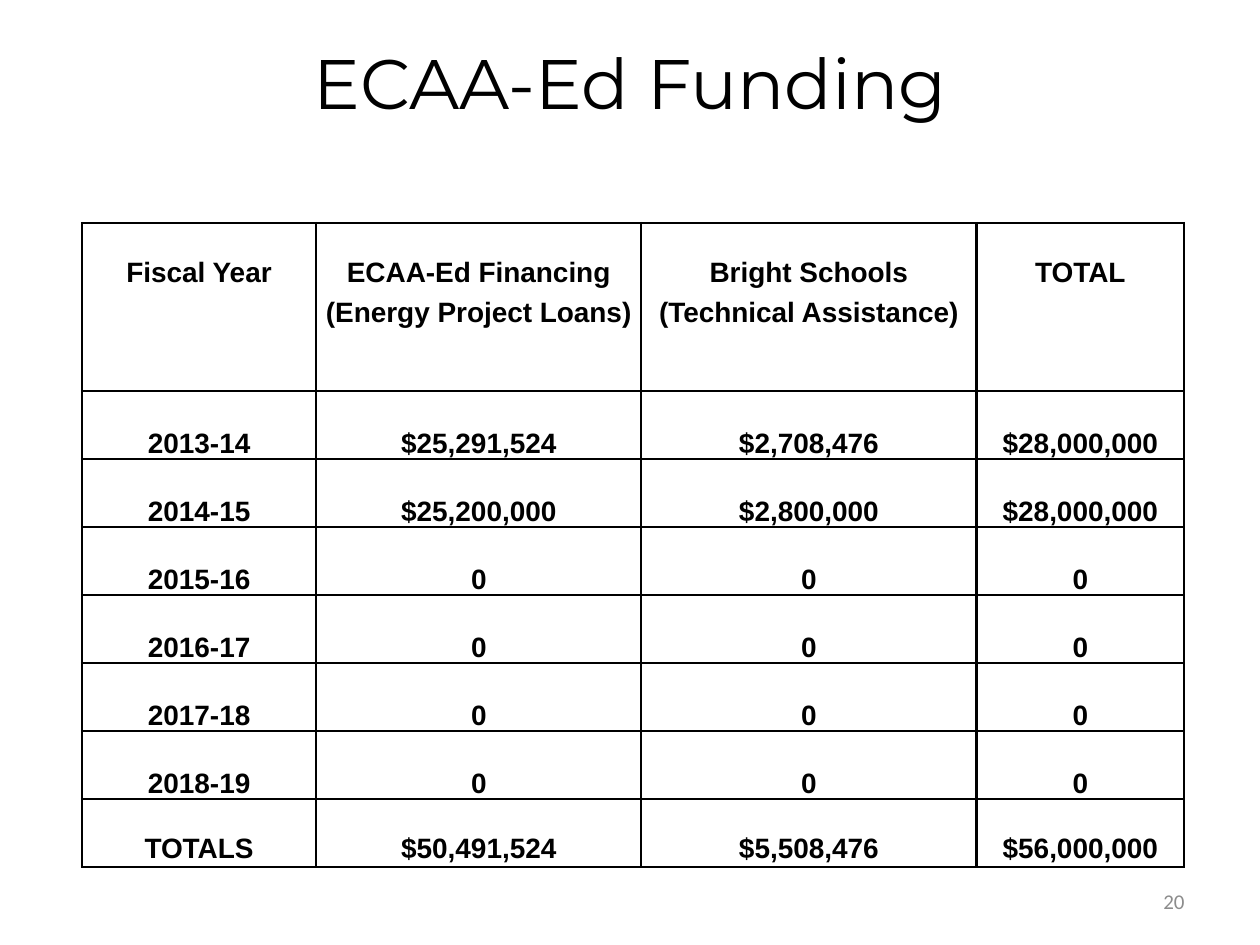
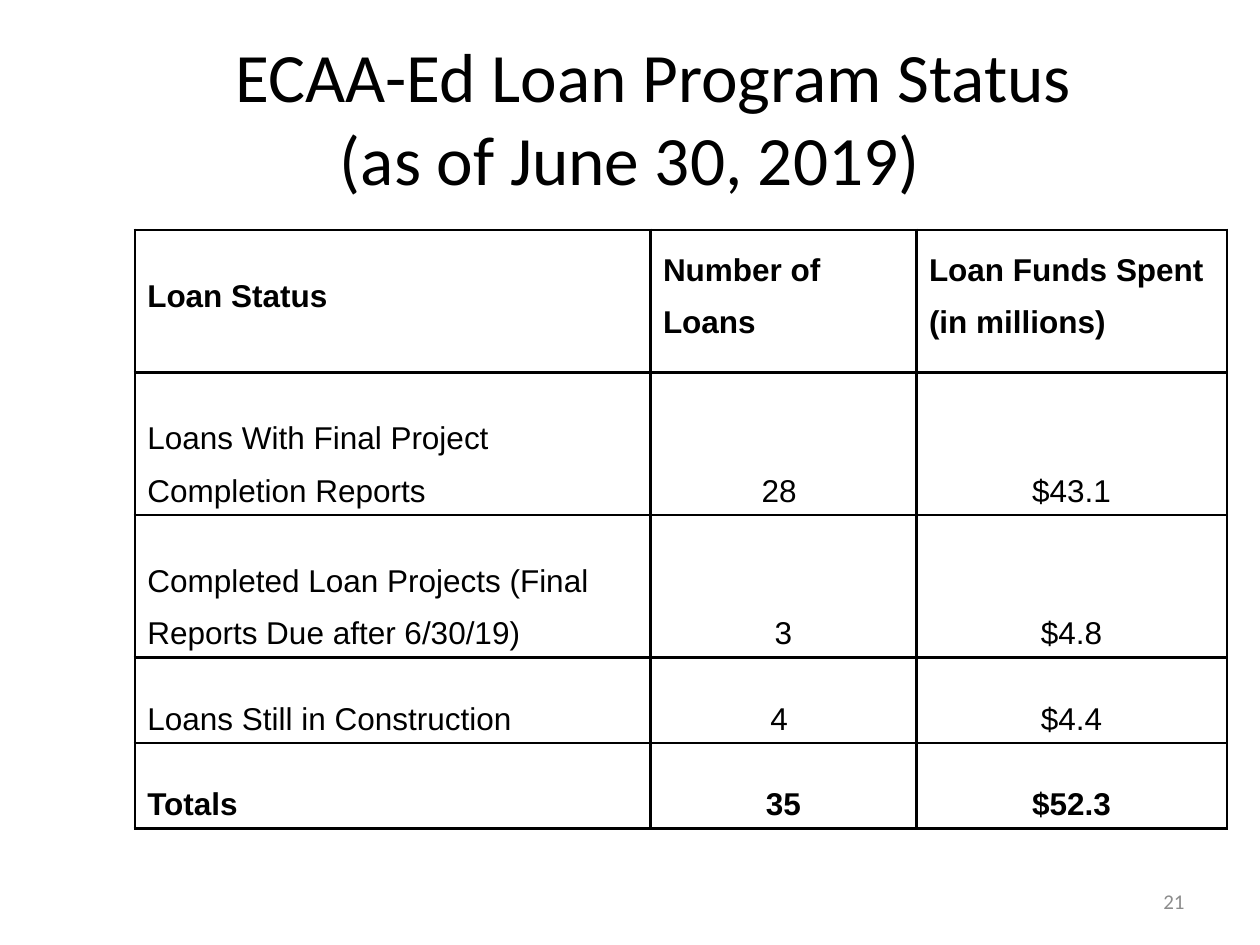
from lxml import etree
from pptx import Presentation
from pptx.dml.color import RGBColor
from pptx.enum import text
from pptx.oxml import ns
from pptx.util import Pt

BLACK = RGBColor(0x00, 0x00, 0x00)
WHITE = RGBColor(0xFF, 0xFF, 0xFF)
GREY = RGBColor(0x8C, 0x8C, 0x8C)
BORDER_WIDTH = 1.5
LINE_HEIGHT = 15
LEFT, CENTER, RIGHT = text.PP_ALIGN.LEFT, text.PP_ALIGN.CENTER, text.PP_ALIGN.RIGHT
TOP, MIDDLE, BOTTOM = (text.MSO_ANCHOR.TOP, text.MSO_ANCHOR.MIDDLE,
                       text.MSO_ANCHOR.BOTTOM)

FUNDING_HEADER = [["Fiscal Year"],
                  ["ECAA-Ed Financing", "(Energy Project Loans)"],
                  ["Bright Schools", "(Technical Assistance)"],
                  ["TOTAL"]]
FUNDING_YEARS = [
    ["2013-14", "$25,291,524", "$2,708,476", "$28,000,000"],
    ["2014-15", "$25,200,000", "$2,800,000", "$28,000,000"],
    *[[year, "0", "0", "0"] for year in ("2015-16", "2016-17", "2017-18", "2018-19")],
]
FUNDING_TOTALS = ["TOTALS", "$50,491,524", "$5,508,476", "$56,000,000"]

LOAN_HEADER = [["Loan Status"], ["Number of", "Loans"],
               ["Loan Funds Spent", "(in millions)"]]
LOAN_STATUS = [
    [["Loans With Final Project", "Completion Reports"], ["28 "], ["$43.1"]],
    [["Completed Loan Projects (Final", "Reports Due after 6/30/19)"], ["3"], ["$4.8"]],
    [["Loans Still in Construction"], ["4 "], ["$4.4"]],
    [["Totals"], ["35"], ["$52.3"]],
]


def write_lines(frame, lines, font, size, color, align, bold=False):
    for index, line in enumerate(lines):
        paragraph = frame.paragraphs[0] if index == 0 else frame.add_paragraph()
        paragraph.alignment = align
        run = paragraph.add_run()
        run.text = line
        run.font.name = font
        run.font.size = Pt(size)
        run.font.bold = bold
        run.font.color.rgb = color
    return frame.paragraphs


def add_label(slide, box, lines, font, size, color, align):
    frame = slide.shapes.add_textbox(*map(Pt, box)).text_frame
    frame.word_wrap = True
    frame.vertical_anchor = MIDDLE
    write_lines(frame, lines, font, size, color, align)
    return frame


def add_title(slide, box, lines, font, size):
    return add_label(slide, box, lines, font, size, BLACK, CENTER)


def add_page_number(slide, number):
    add_label(slide, (516, 500.5, 168, 28.8), [str(number)], "Calibri", 12, GREY, RIGHT)


def add_borders(cell):
    properties = cell._tc.get_or_add_tcPr()
    for side in ("lnL", "lnR", "lnT", "lnB"):
        border = etree.SubElement(properties, ns.qn(f"a:{side}"), w=str(Pt(BORDER_WIDTH)))
        fill = etree.SubElement(border, ns.qn("a:solidFill"))
        etree.SubElement(fill, ns.qn("a:srgbClr"), val=str(BLACK))


def add_grid(slide, left, top, widths, heights):
    table = slide.shapes.add_table(len(heights), len(widths), Pt(left), Pt(top),
                                   Pt(sum(widths)), Pt(sum(heights))).table
    table.first_row = table.horz_banding = False
    for column, width in zip(table.columns, widths):
        column.width = Pt(width)
    for row, height in zip(table.rows, heights):
        row.height = Pt(height)
    return table


def fill_cell(cell, lines, size, align, anchor, bold, gap):
    add_borders(cell)
    cell.fill.solid()
    cell.fill.fore_color.rgb = WHITE
    cell.vertical_anchor = anchor
    paragraphs = write_lines(cell.text_frame, lines, "Arial", size, BLACK, align, bold)
    for paragraph in paragraphs:
        paragraph.line_spacing = Pt(LINE_HEIGHT)
    for paragraph in paragraphs[:-1]:
        paragraph.space_after = Pt(gap)


def add_funding_table(slide, left, top):
    gap = 7.5
    years = [[[value] for value in row] for row in FUNDING_YEARS]
    rows = [FUNDING_HEADER, *years, [[value] for value in FUNDING_TOTALS]]
    table = add_grid(slide, left, top, (133.9, 185.8, 191.5, 118.8),
                     [96] + [38.87] * (len(rows) - 1))
    for r, row in enumerate(rows):
        is_year = 0 < r < len(rows) - 1
        for c, lines in enumerate(row):
            cell = table.cell(r, c)
            cell.margin_left = cell.margin_right = Pt(5)
            cell.margin_top = Pt(0 if is_year else LINE_HEIGHT + gap)
            cell.margin_bottom = Pt(0)
            fill_cell(cell, lines, 16, CENTER, BOTTOM if is_year else TOP, True, gap)


def add_loan_table(slide, left, top):
    rows = [LOAN_HEADER, *LOAN_STATUS]
    table = add_grid(slide, left, top, (294.7, 152, 177.3), [81.5] * 3 + [48.8] * 2)
    for r, row in enumerate(rows):
        for c, lines in enumerate(row):
            fill_cell(table.cell(r, c), lines, 18,
                      CENTER if r and c else LEFT,
                      BOTTOM if r else MIDDLE,
                      r in (0, len(rows) - 1), LINE_HEIGHT)


def build_funding_slide(slide):
    title = add_title(slide, (36, 28, 648, 83.5), ["ECAA-Ed Funding"], "Montserrat", 40)
    title.margin_bottom = Pt(50)
    add_funding_table(slide, 46.8, 127.5)
    add_page_number(slide, 20)


def build_loan_slide(slide):
    title = add_title(slide, (36, 21.6, 648, 90),
                      ["ECAA-Ed Loan Program Status", "(as of June 30, 2019)"],
                      "Calibri", 39.6)
    title.paragraphs[0]._p.get_or_add_pPr().set("marL", str(Pt(26.8)))
    add_loan_table(slide, 77, 131.3)
    add_page_number(slide, 21)


def main():
    deck = Presentation()
    deck.slide_width, deck.slide_height = Pt(720), Pt(540)
    for build in (build_funding_slide, build_loan_slide):
        build(deck.slides.add_slide(deck.slide_layouts[6]))
    deck.save("out.pptx")


if __name__ == "__main__":
    main()
